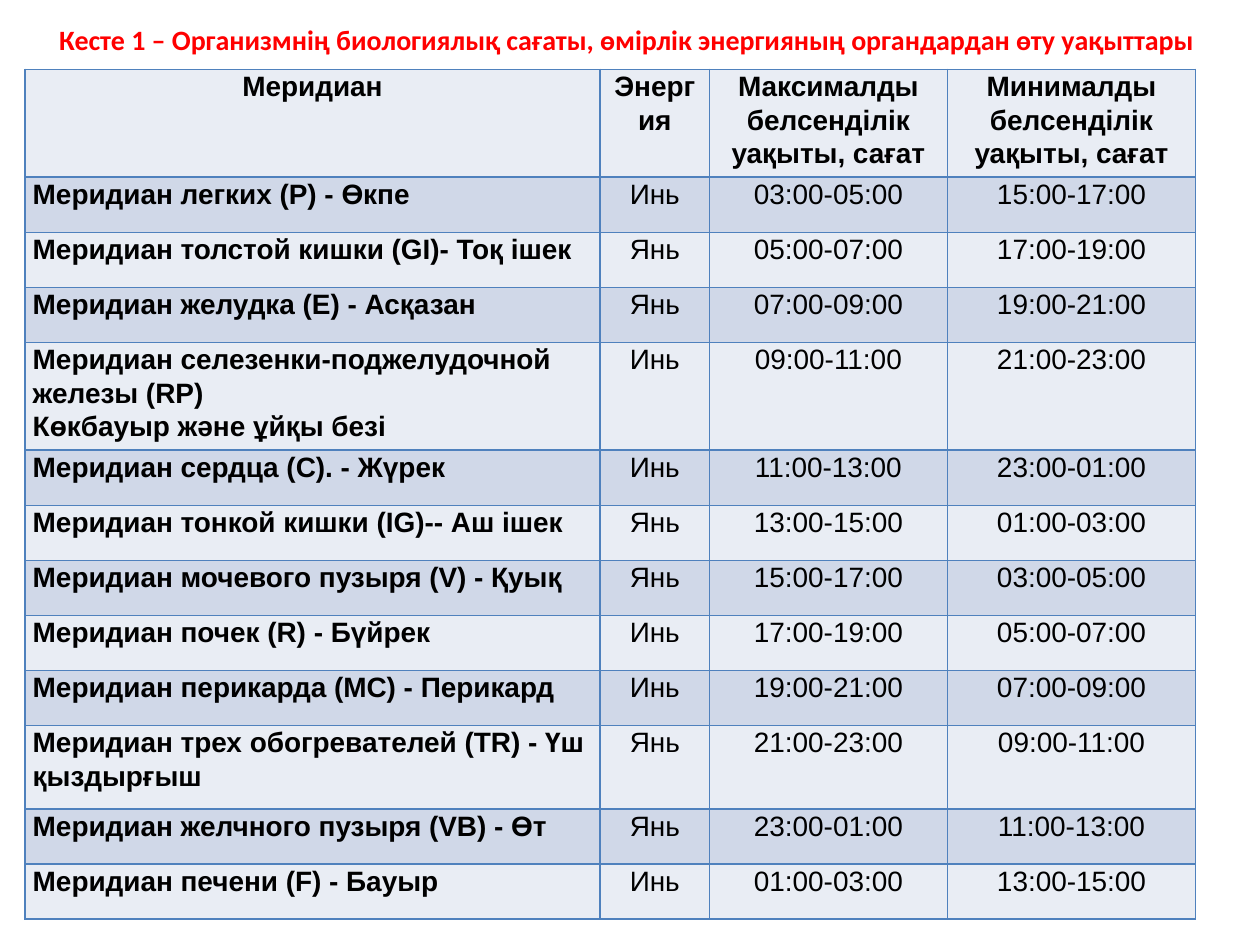
import lxml.etree
import pptx
import pptx.dml.color
import pptx.enum.text
import pptx.oxml.ns
import pptx.util

Cm = pptx.util.Cm
RED = pptx.dml.color.RGBColor(0xFF, 0x00, 0x00)
BLACK = pptx.dml.color.RGBColor(0x00, 0x00, 0x00)
LIGHT = pptx.dml.color.RGBColor(0xE9, 0xED, 0xF4)
DARK = pptx.dml.color.RGBColor(0xD0, 0xD8, 0xE8)
BORDER = pptx.dml.color.RGBColor(0x4F, 0x81, 0xBD)

TITLE = "Кесте 1 – Организмнің биологиялық сағаты, өмірлік энергияның органдардан өту уақыттары"
HEADER = (
    "Меридиан",
    "Энергия",
    "Максималды белсенділік уақыты, сағат",
    "Минималды белсенділік уақыты, сағат",
)
MERIDIANS = [
    ("Меридиан легких (P) - Өкпе", "Инь"),
    ("Меридиан толстой кишки (GI)- Тоқ ішек", "Янь"),
    ("Меридиан желудка (Е) - Асқазан", "Янь"),
    ("Меридиан селезенки-поджелудочной железы (RP)\nКөкбауыр және ұйқы безі", "Инь"),
    ("Меридиан сердца (С). - Жүрек", "Инь"),
    ("Меридиан тонкой кишки (IG)-- Аш ішек", "Янь"),
    ("Меридиан мочевого пузыря (V) - Қуық", "Янь"),
    ("Меридиан почек (R) - Бүйрек", "Инь"),
    ("Меридиан перикарда (MC) - Перикард", "Инь"),
    ("Меридиан трех обогревателей (TR) - Үш қыздырғыш", "Янь"),
    ("Меридиан желчного пузыря (VB) - Өт", "Янь"),
    ("Меридиан печени (F) - Бауыр", "Инь"),
]
FIRST_HOUR = 3
COLUMN_WIDTHS = (11.6, 2.2, 4.8, 5)
ROW_HEIGHT = 1.11
TALL_ROWS = {0: 2.16, 4: 2.16, 10: 1.68}


def two_hours(start):
    return f"{start % 24:02}:00-{(start + 2) % 24:02}:00"


def table_rows():
    rows = [HEADER]
    for index, (meridian, energy) in enumerate(MERIDIANS):
        start = FIRST_HOUR + 2 * index
        rows.append((meridian, energy, two_hours(start), two_hours(start + 12)))
    return rows


def format_font(font, name, color, bold):
    font.name = name
    font.size = pptx.util.Pt(16)
    font.bold = bold
    font.color.rgb = color


def add_borders(cell):
    properties = cell._tc.get_or_add_tcPr()
    for position, side in enumerate(("lnL", "lnR", "lnT", "lnB")):
        line = lxml.etree.Element(pptx.oxml.ns.qn(f"a:{side}"), w=str(pptx.util.Pt(1)))
        fill = lxml.etree.SubElement(line, pptx.oxml.ns.qn("a:solidFill"))
        lxml.etree.SubElement(fill, pptx.oxml.ns.qn("a:srgbClr"), val=str(BORDER))
        properties.insert(position, line)


def fill_cell(cell, text, color, bold, centered):
    cell.margin_left = cell.margin_right = Cm(0.16)
    cell.margin_top = cell.margin_bottom = 0
    cell.fill.solid()
    cell.fill.fore_color.rgb = color
    add_borders(cell)
    cell.text_frame.text = text
    alignment = pptx.enum.text.PP_ALIGN
    for paragraph in cell.text_frame.paragraphs:
        paragraph.alignment = alignment.CENTER if centered else alignment.LEFT
        paragraph.line_spacing = 1.07
        for run in paragraph.runs:
            format_font(run.font, "Arial", BLACK, bold)


def place_title(slide, left, top, width, height):
    title = slide.shapes.title
    title.left, title.top, title.width, title.height = left, top, width, height
    frame = title.text_frame
    frame.text = TITLE
    frame.word_wrap = True
    frame.auto_size = pptx.enum.text.MSO_AUTO_SIZE.SHAPE_TO_FIT_TEXT
    frame.vertical_anchor = pptx.enum.text.MSO_ANCHOR.TOP
    paragraph = frame.paragraphs[0]
    paragraph.alignment = pptx.enum.text.PP_ALIGN.LEFT
    format_font(paragraph.runs[0].font, "Calibri", RED, True)


def place_meridian_table(slide, left, top, width, height):
    rows = table_rows()
    table = slide.shapes.add_table(len(rows), len(HEADER), left, top, width, height).table
    for column, column_width in zip(table.columns, COLUMN_WIDTHS):
        column.width = Cm(column_width)
    for row_index, texts in enumerate(rows):
        table.rows[row_index].height = Cm(TALL_ROWS.get(row_index, ROW_HEIGHT))
        color = DARK if row_index % 2 else LIGHT
        for column_index, text in enumerate(texts):
            is_header, is_name = row_index == 0, column_index == 0
            fill_cell(table.cell(row_index, column_index), text, color,
                      bold=is_header or is_name, centered=is_header or not is_name)


def main():
    presentation = pptx.Presentation()
    presentation.slide_width = Cm(25.4)
    presentation.slide_height = Cm(19.05)
    slide = presentation.slides.add_slide(presentation.slide_layouts.get_by_name("Title Only"))
    place_title(slide, Cm(0.94), Cm(0.33), Cm(24.41), Cm(0.94))
    place_meridian_table(slide, Cm(0.5), Cm(1.4), Cm(23.6), Cm(17.15))
    presentation.save("out.pptx")


if __name__ == "__main__":
    main()
